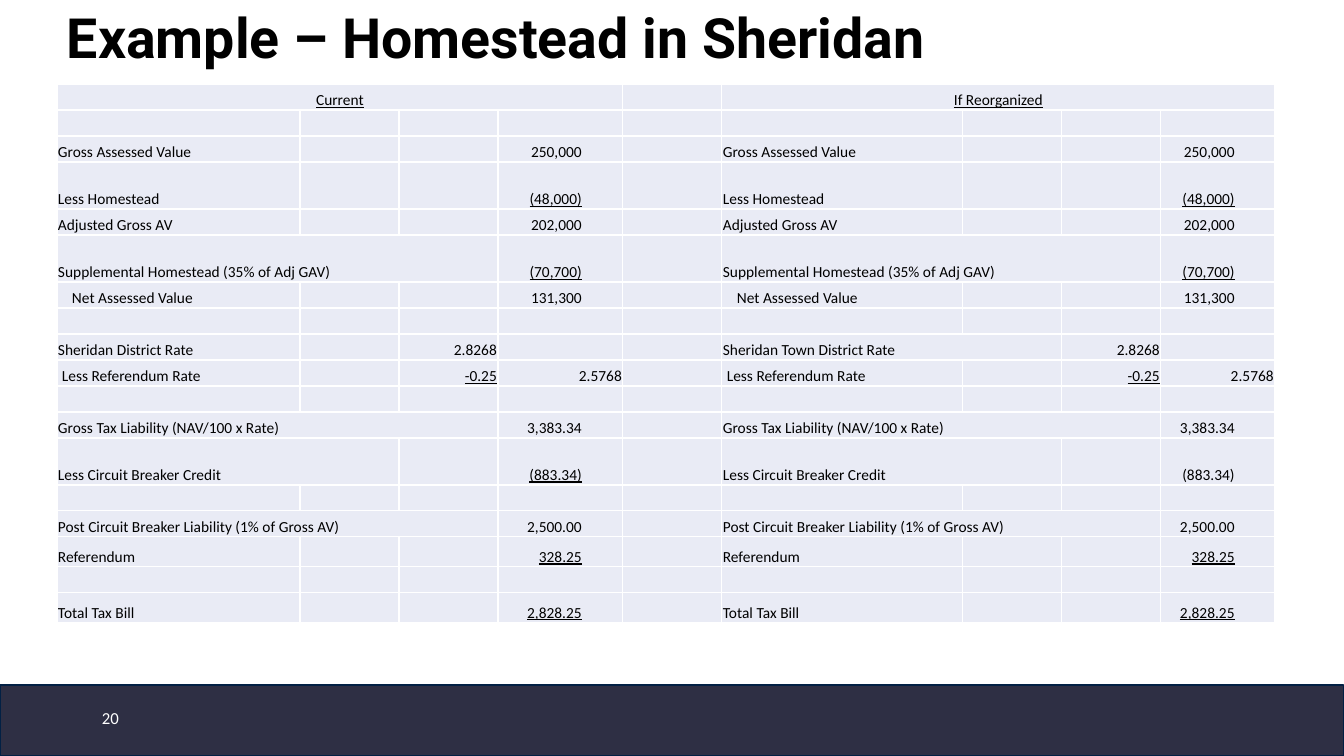
"""Builds the slide comparing a Sheridan homestead tax bill before and after reorganization."""
from lxml.etree import SubElement
from pptx import Presentation
from pptx.dml.color import RGBColor
from pptx.enum.shapes import MSO_SHAPE
from pptx.enum.text import MSO_ANCHOR, MSO_UNDERLINE, PP_ALIGN
from pptx.oxml.ns import qn
from pptx.util import Pt

COLORS = {"cell": "E9EBF5", "border": "FFFFFF", "text": "000000",
          "footer": "2E2F44", "footer_line": "022044", "number": "FFFFFF"}
TITLE = "Example – Homestead in Sheridan"
PAGE_NUMBER = "20"
SINGLE, DOUBLE = MSO_UNDERLINE.SINGLE_LINE, MSO_UNDERLINE.DOUBLE_LINE

BLANK = {"height": 26}
ROWS = [
    BLANK,
    {"height": 26, "label": "Gross Assessed Value", "amount": "250,000"},
    {"height": 47, "label": "Less Homestead", "amount": "(48,000)", "rule": SINGLE},
    {"height": 26, "label": "Adjusted Gross AV", "amount": "202,000"},
    {"height": 47, "label": "Supplemental Homestead (35% of Adj GAV)", "span": 3,
     "amount": "(70,700)", "rule": SINGLE},
    {"height": 26, "label": "Net Assessed Value", "indent": 14, "amount": "131,300"},
    BLANK,
    {"height": 26, "label": "Sheridan District Rate", "rate": "2.8268"},
    {"height": 26, "label": "Less Referendum Rate", "indent": 4, "rate": "-0.25",
     "rate_rule": SINGLE, "net_rate": "2.5768"},
    BLANK,
    {"height": 26, "label": "Gross Tax Liability (NAV/100 x Rate)", "span": 3, "amount": "3,383.34"},
    {"height": 47, "label": "Less Circuit Breaker Credit", "span": 2,
     "amount": "(883.34)", "rule": SINGLE},
    BLANK,
    {"height": 26, "label": "Post Circuit Breaker Liability (1% of Gross AV)", "span": 3,
     "amount": "2,500.00"},
    {"height": 30, "label": "Referendum", "amount": "328.25", "rule": SINGLE},
    BLANK,
    {"height": 30, "label": "Total Tax Bill", "amount": "2,828.25", "rule": DOUBLE},
]
PANELS = [
    {"heading": "Current", "column": 0, "amount_edge": 83, "changes": {}},
    {"heading": "If Reorganized", "column": 5, "amount_edge": 73, "changes": {
        "Sheridan District Rate": {"label": "Sheridan Town District Rate", "span": 2},
        "Less Circuit Breaker Credit": {"rule": None}}},
]
HEADING_HEIGHT = 26
COLUMN_WIDTHS = [243, 99, 99, 125, 99, 241, 99, 99, 114]
TABLE_LEFT, TABLE_TOP = 57, 84
SLIDE_WIDTH, SLIDE_HEIGHT = 1344, 756
EMU_PER_PX = 914400 / 100.8


def px(length):
    return round(length * EMU_PER_PX)


def color(name):
    return RGBColor.from_string(COLORS[name])


def write(paragraph, text, color_name, **format_values):
    run = paragraph.add_run()
    run.text = text
    for key, value in format_values.items():
        setattr(run.font, key, value)
    run.font.color.rgb = color(color_name)


def add_line(slide, text, box, color_name, **format_values):
    frame = slide.shapes.add_textbox(*map(px, box)).text_frame
    frame.word_wrap = True
    frame.vertical_anchor = MSO_ANCHOR.MIDDLE
    write(frame.paragraphs[0], text, color_name, **format_values)
    return frame.paragraphs[0]


def style_cell(cell):
    margins = {"margin_left": 1, "margin_right": 1, "margin_top": 1, "margin_bottom": 0}
    for key, value in margins.items():
        setattr(cell, key, px(value))
    cell.vertical_anchor = MSO_ANCHOR.BOTTOM
    properties = cell._tc.get_or_add_tcPr()
    for side in ("lnL", "lnR", "lnT", "lnB"):
        border = SubElement(properties, qn(f"a:{side}"), w=str(Pt(1)))
        fill = SubElement(border, qn("a:solidFill"))
        SubElement(fill, qn("a:srgbClr"), val=COLORS["border"])
    cell.fill.solid()
    cell.fill.fore_color.rgb = color("cell")
    SubElement(cell.text_frame.paragraphs[0]._p, qn("a:endParaRPr"), sz="1100")


def fill_cell(cell, text, align=PP_ALIGN.LEFT, rule=None, indent=0, edge=None):
    paragraph = cell.text_frame.paragraphs[0]
    paragraph.alignment = align
    cell.margin_left = px(1 + indent)
    if edge:
        tabs = SubElement(paragraph._p.get_or_add_pPr(), qn("a:tabLst"))
        SubElement(tabs, qn("a:tab"), pos=str(px(edge)), algn="r")
        text = "\t" + text
    write(paragraph, text, "text", name="Calibri", size=Pt(11), underline=rule)


def fill_panel(table, panel):
    first = panel["column"]
    heading = table.cell(0, first)
    heading.merge(table.cell(0, first + 3))
    fill_cell(heading, panel["heading"], PP_ALIGN.CENTER, SINGLE)
    for index, row in enumerate(ROWS, 1):
        if "label" not in row:
            continue
        row = {**row, **panel["changes"].get(row["label"], {})}
        label, rate, amount = (table.cell(index, first + offset) for offset in (0, 2, 3))
        if "span" in row:
            label.merge(table.cell(index, first + row["span"] - 1))
        fill_cell(label, row["label"], indent=row.get("indent", 0))
        if "rate" in row:
            fill_cell(rate, row["rate"], PP_ALIGN.RIGHT, row.get("rate_rule"))
        if "net_rate" in row:
            fill_cell(amount, row["net_rate"], PP_ALIGN.RIGHT)
        if "amount" in row:
            fill_cell(amount, row["amount"], rule=row.get("rule"), edge=panel["amount_edge"])


def add_comparison(slide):
    heights = [HEADING_HEIGHT] + [row["height"] for row in ROWS]
    box = (TABLE_LEFT, TABLE_TOP, sum(COLUMN_WIDTHS), sum(heights))
    table = slide.shapes.add_table(len(heights), len(COLUMN_WIDTHS), *map(px, box)).table
    table.first_row = table.horz_banding = False
    for column, width in zip(table.columns, COLUMN_WIDTHS):
        column.width = px(width)
    for row, height in zip(table.rows, heights):
        row.height = px(height)
    for cell in table.iter_cells():
        style_cell(cell)
    for panel in PANELS:
        fill_panel(table, panel)


def add_footer(slide):
    top = 685
    box = (0, top, SLIDE_WIDTH, SLIDE_HEIGHT - top)
    footer = slide.shapes.add_shape(MSO_SHAPE.RECTANGLE, *map(px, box))
    footer.shadow.inherit = False
    footer.fill.solid()
    footer.fill.fore_color.rgb = color("footer")
    footer.line.color.rgb = color("footer_line")
    footer.line.width = Pt(0)
    add_line(slide, PAGE_NUMBER, (92, 698, 302, 40), "number", name="Calibri", size=Pt(12))


def main():
    deck = Presentation()
    deck.slide_width, deck.slide_height = px(SLIDE_WIDTH), px(SLIDE_HEIGHT)
    slide = deck.slides.add_slide(deck.slide_layouts[6])
    add_footer(slide)
    title = add_line(slide, TITLE, (57, 32, 1159, 18), "text",
                     name="Roboto", size=Pt(39.6), bold=True)
    title.line_spacing = 0.9
    add_comparison(slide)
    deck.save("out.pptx")


if __name__ == "__main__":
    main()
